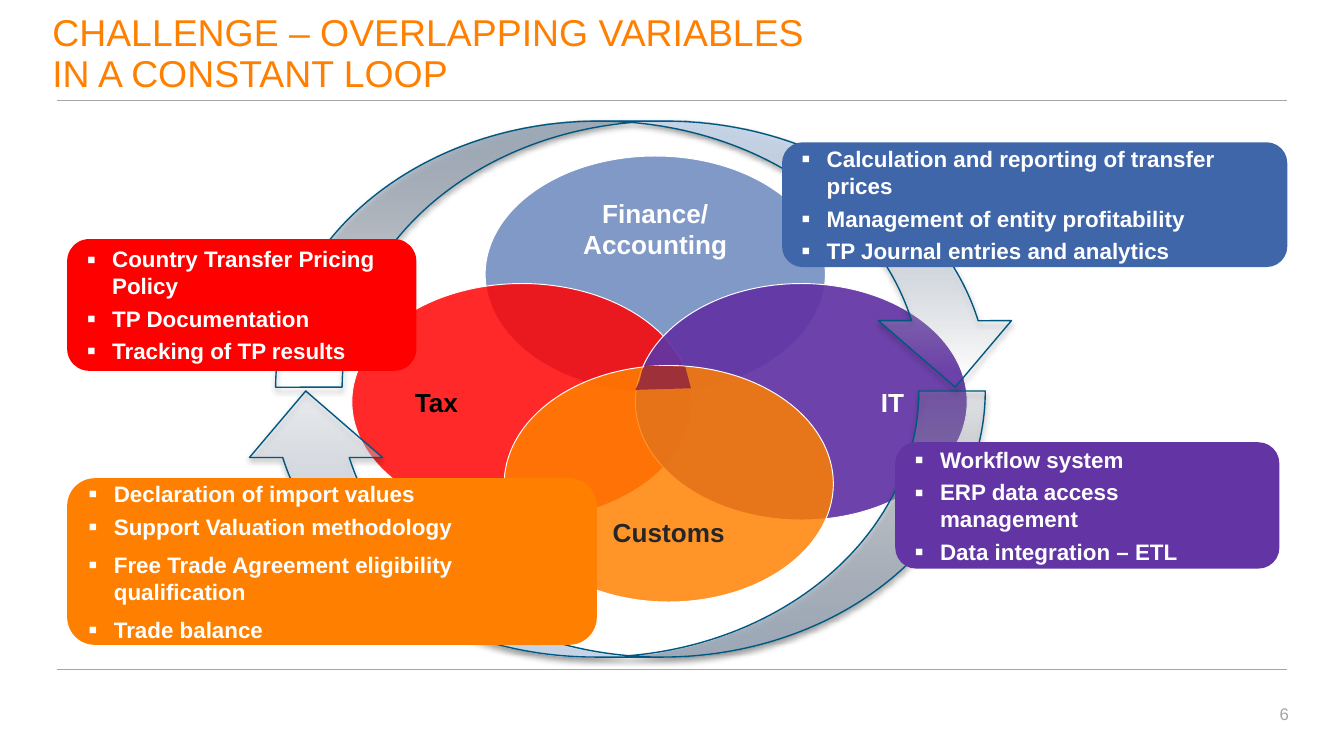
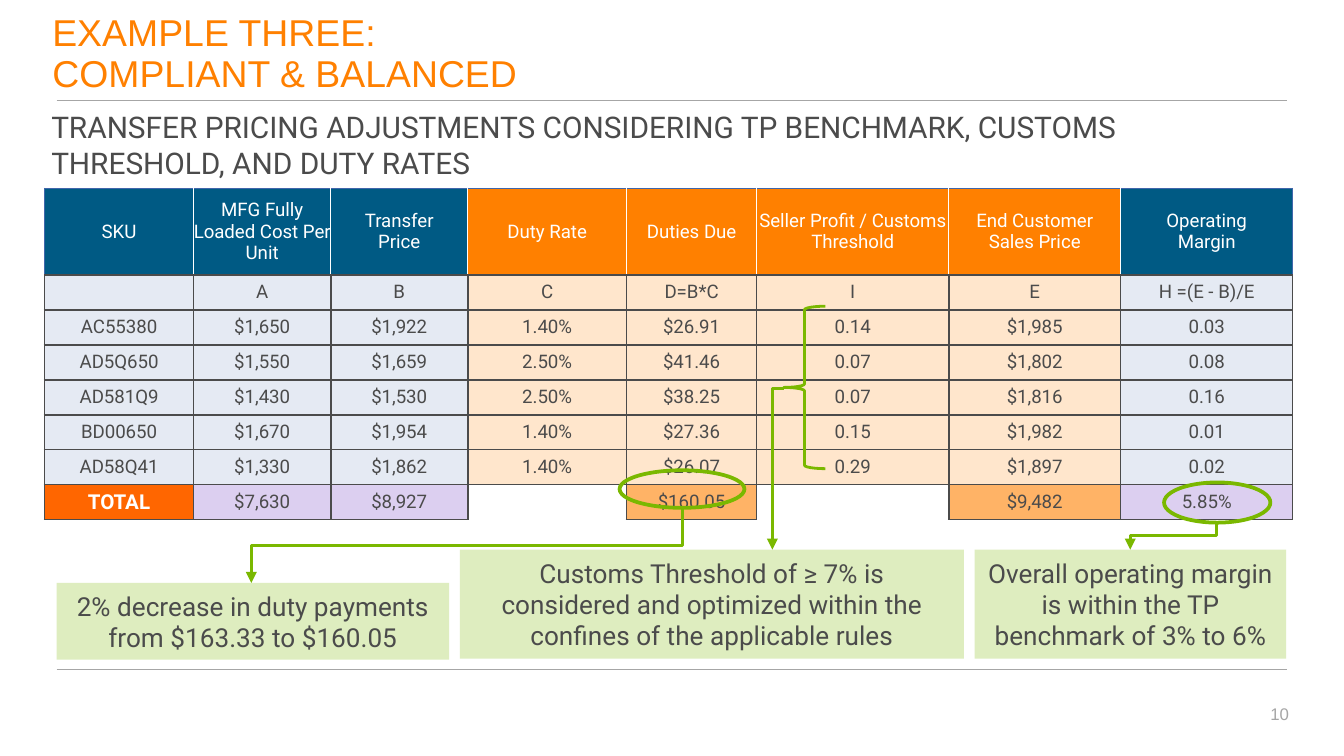
from lxml import etree
from pptx import Presentation
from pptx.dml.color import RGBColor
from pptx.enum.shapes import MSO_CONNECTOR, MSO_SHAPE
from pptx.enum.text import MSO_ANCHOR, PP_ALIGN
from pptx.oxml import parse_xml
from pptx.oxml.ns import qn
from pptx.util import Cm, Pt

STRAIGHT, ELBOW = MSO_CONNECTOR.STRAIGHT, MSO_CONNECTOR.ELBOW
OVAL, CIRCLE = MSO_SHAPE.OVAL, MSO_SHAPE.FLOWCHART_CONNECTOR
RECTANGLE, ROUNDED = MSO_SHAPE.RECTANGLE, MSO_SHAPE.ROUNDED_RECTANGLE
BRACE, LOOP_ARROW = MSO_SHAPE.LEFT_BRACE, MSO_SHAPE.CURVED_DOWN_ARROW
TOP, MIDDLE, BOTTOM = MSO_ANCHOR.TOP, MSO_ANCHOR.MIDDLE, MSO_ANCHOR.BOTTOM
LEFT, CENTER, RIGHT = PP_ALIGN.LEFT, PP_ALIGN.CENTER, PP_ALIGN.RIGHT

WHITE = RGBColor(0xFF, 0xFF, 0xFF)
BLACK = RGBColor(0x00, 0x00, 0x00)
CHARCOAL = RGBColor(0x26, 0x26, 0x26)
TEXT_GRAY = RGBColor(0x4B, 0x4B, 0x4B)
RULE_GRAY = RGBColor(0xA6, 0xA6, 0xA6)
ORANGE = RGBColor(0xFF, 0x80, 0x00)
TOTAL_ORANGE = RGBColor(0xFF, 0x66, 0x00)
MID_ORANGE = RGBColor(0xFF, 0xB3, 0x66)
PALE_ORANGE = RGBColor(0xFF, 0xE6, 0xCC)
RED = RGBColor(0xFF, 0x00, 0x00)
MAROON = RGBColor(0x9E, 0x30, 0x39)
PURPLE = RGBColor(0x62, 0x34, 0xA4)
LILAC = RGBColor(0xDC, 0xCF, 0xF0)
BLUE = RGBColor(0x40, 0x66, 0xAA)
LIGHT_BLUE = RGBColor(0x80, 0x99, 0xC6)
PALE_BLUE = RGBColor(0xE5, 0xEA, 0xF3)
NAVY = RGBColor(0x00, 0x5A, 0x84)
ARROW_EDGE = RGBColor(0x00, 0x58, 0x81)
GREEN = RGBColor(0x7A, 0xB8, 0x00)
PALE_GREEN = RGBColor(0xDE, 0xED, 0xBF)

DRAWING = "http://schemas.openxmlformats.org/drawingml/2006/main"
INSETS = (0.25, 0.13, 0.25, 0.13)
NO_INSETS = (0, 0, 0, 0)


def add_child(parent, tag, **attributes):
    return etree.SubElement(parent, qn(tag), attributes)


class DeckBuilder:
    """Holds the deck style and the page being filled; lengths are in cm."""

    def __init__(self):
        self.deck = Presentation()
        self.deck.slide_width, self.deck.slide_height = Cm(25.4), Cm(14.29)
        self.page = None

    def new_page(self, title, number):
        self.page = self.deck.slides.add_slide(self.deck.slide_layouts[6])
        for y in (12.65, 1.9):
            self.line((1.07, y), (24.33, y), RULE_GRAY, 0.5)
        self.text_box((23.52, 13.18, 1.09, 0.64), [number], 9, RULE_GRAY, align=RIGHT)
        self.text_box((0.99, 0.2, 23.34, 1.6), [title], 20, ORANGE,
                      anchor=BOTTOM, insets=NO_INSETS, spacing=0.9)

    def fill_text(self, frame, texts, size, color, font="Arial", bold=False, align=LEFT,
                  anchor=TOP, insets=INSETS, spacing=None):
        """Add one paragraph per text; a newline inside a text breaks the line."""
        frame.word_wrap = True
        frame.vertical_anchor = anchor
        (frame.margin_left, frame.margin_top,
         frame.margin_right, frame.margin_bottom) = map(Cm, insets)
        for index, text in enumerate(texts):
            para = frame.add_paragraph() if index else frame.paragraphs[0]
            para.alignment = align
            para.line_spacing = spacing
            for row, words in enumerate(text.split("\n")):
                if row:
                    para.add_line_break()
                self.span(para, words, size, color, font, bold)

    def span(self, para, words, size, color, font, bold):
        span = para.add_run()
        span.text = words
        span.font.size, span.font.name, span.font.bold = Pt(size), font, bold
        span.font.color.rgb = color

    def text_box(self, at, texts, size, color, **style):
        box = self.page.shapes.add_textbox(*map(Cm, at))
        self.fill_text(box.text_frame, texts, size, color, **style)

    def paint(self, shape, fill=None, alpha=100, line=None, width=0.5):
        shape.shadow.inherit = False
        if fill is None:
            shape.fill.background()
        else:
            shape.fill.solid()
            shape.fill.fore_color.rgb = fill
            if alpha < 100:
                color = shape._element.spPr.find(".//" + qn("a:srgbClr"))
                add_child(color, "a:alpha", val=str(alpha * 1000))
        if line is None:
            shape.line.fill.background()
        else:
            shape.line.color.rgb = line
            shape.line.width = Pt(width)

    def shape(self, kind, at, **paint):
        shape = self.page.shapes.add_shape(kind, *map(Cm, at))
        self.paint(shape, **paint)
        return shape

    def polygon(self, points, fill):
        corners = [(Cm(x), Cm(y)) for x, y in points]
        builder = self.page.shapes.build_freeform(*corners[0], scale=1.0)
        builder.add_line_segments(corners[1:], close=True)
        self.paint(builder.convert_to_shape(), fill)

    def bullet_box(self, at, fill, items, gaps, right_inset=0.25):
        box = self.shape(ROUNDED, at, fill=fill)
        self.fill_text(box.text_frame, items, 12, WHITE, bold=True, anchor=MIDDLE,
                       insets=(0.25, 0.13, right_inset, 0.13))
        for para, gap in zip(box.text_frame.paragraphs, gaps):
            para.level = 1
            para.space_before = Pt(gap)
            properties = para._p.get_or_add_pPr()
            properties.set("marL", str(Cm(0.48)))
            properties.set("indent", str(Cm(-0.48)))
            add_child(add_child(properties, "a:buClr"), "a:srgbClr", val=str(WHITE))
            add_child(properties, "a:buSzPct", val="116000")
            add_child(properties, "a:buFont", typeface="Arial")
            add_child(properties, "a:buChar", char="▪")

    def loop_arrow(self, at, rotation, start_alpha):
        arrow = self.shape(LOOP_ARROW, at, line=ARROW_EDGE, width=0.75)
        arrow.rotation = rotation
        properties = arrow._element.spPr
        gradient = parse_xml(
            f'<a:gradFill xmlns:a="{DRAWING}" rotWithShape="1"><a:gsLst>'
            f'<a:gs pos="6000"><a:srgbClr val="D9E3F0"><a:alpha val="{start_alpha * 1000}"/>'
            '</a:srgbClr></a:gs><a:gs pos="100000"><a:srgbClr val="C5D4E7"/></a:gs>'
            '<a:gs pos="100000"><a:srgbClr val="E9EEF7"/></a:gs></a:gsLst>'
            '<a:lin ang="16200000" scaled="0"/></a:gradFill>')
        properties.replace(properties.find(qn("a:noFill")), gradient)
        shadow = add_child(properties.find(qn("a:effectLst")), "a:outerShdw",
                           blurRad=str(Pt(3.1)), dist=str(Pt(1.6)), dir="5400000",
                           rotWithShape="0")
        add_child(add_child(shadow, "a:srgbClr", val=str(BLACK)), "a:alpha", val="38000")

    def line(self, start, end, color, width, kind=STRAIGHT):
        line = self.page.shapes.add_connector(kind, *map(Cm, start + end))
        line.line.color.rgb = color
        line.line.width = Pt(width)
        add_child(line._element.spPr, "a:effectLst")
        return line

    def elbow_arrow(self, start, end):
        arrow = self.line(start, end, GREEN, 1.5, ELBOW)
        add_child(arrow.line._get_or_add_ln(), "a:tailEnd", type="triangle")
        return arrow

    def corner_arrow(self, start, end):
        """Run sideways first, then down."""
        arrow = self.elbow_arrow(start, end)
        arrow._element.spPr.find(qn("a:prstGeom")).set("prst", "bentConnector2")

    def step_arrow(self, start, end):
        """Run down, left, then down: an elbow lying sideways, turned by 90 degrees."""
        middle_x, middle_y = (start[0] + end[0]) / 2, (start[1] + end[1]) / 2
        half_drop, half_run = (end[1] - start[1]) / 2, (start[0] - end[0]) / 2
        arrow = self.elbow_arrow((middle_x - half_drop, middle_y - half_run),
                                 (middle_x + half_drop, middle_y + half_run))
        arrow._element.spPr.find(qn("a:xfrm")).set("rot", "5400000")

    def table(self, left, top, widths, heights):
        frame = self.page.shapes.add_table(len(heights), len(widths), Cm(left), Cm(top),
                                           Cm(sum(widths)), Cm(sum(heights)))
        table = frame.table
        table.first_row = table.horz_banding = False
        for column, width in zip(table.columns, widths):
            column.width = Cm(width)
        for row, height in zip(table.rows, heights):
            row.height = Cm(height)
        return table

    def cell(self, cell, text, fill, borders, insets, **style):
        if text:
            self.fill_text(cell.text_frame, [text], font="Roboto", align=CENTER, **style)
        else:
            add_child(cell.text_frame.paragraphs[0]._p, "a:endParaRPr", sz="1000")
        cell.vertical_anchor = MIDDLE
        cell.margin_left, cell.margin_top, cell.margin_right, cell.margin_bottom = map(Cm, insets)
        properties = cell._tc.get_or_add_tcPr()
        for side, (color, width) in zip("LRTB", borders):
            edge = add_child(properties, f"a:ln{side}", w=str(Pt(width)))
            if color is None:
                add_child(edge, "a:noFill")
            else:
                add_child(add_child(edge, "a:solidFill"), "a:srgbClr", val=str(color))
        if fill is None:
            cell.fill.background()
        else:
            cell.fill.solid()
            cell.fill.fore_color.rgb = fill


def build_loop_page(builder):
    builder.new_page("CHALLENGE – OVERLAPPING VARIABLES\nIN A CONSTANT LOOP", "6")
    circles = [
        ((9.17, 2.95, 6.43, 4.47), LIGHT_BLUE, 100, "Finance/ Accounting", WHITE, CENTER, TOP, INSETS),
        ((6.65, 5.36, 6.43, 4.47), RED, 84, "Tax", BLACK, LEFT, MIDDLE, INSETS),
        ((12.01, 5.36, 6.27, 4.47), PURPLE, 93, "IT", WHITE, CENTER, MIDDLE, (3.65, 0.13, 0.2, 0.13)),
        ((9.53, 6.91, 6.22, 4.47), ORANGE, 84, "Customs", CHARCOAL, CENTER, MIDDLE,
         (0.25, 1.96, 0.25, 0.13)),
    ]
    for at, fill, alpha, name, color, align, anchor, insets in circles:
        circle = builder.shape(CIRCLE, at, fill=fill, alpha=alpha, line=WHITE)
        builder.fill_text(circle.text_frame, [name], 14, color, bold=True,
                          align=align, anchor=anchor, insets=insets)
    builder.polygon([(12.14, 6.99), (12.19, 6.91), (12.95, 6.93), (13.06, 7.34),
                     (12.01, 7.37), (12.09, 7.2)], MAROON)
    builder.loop_arrow((4.52, 7.39, 14.1, 5.03), 180, 22)
    builder.loop_arrow((5.21, 2.29, 14.1, 5.03), 0, 0)
    builder.bullet_box((1.27, 9.04, 10.01, 3.15), ORANGE, [
        "Declaration of import values", "Support Valuation methodology",
        "Free Trade Agreement eligibility qualification", "Trade balance"], (0, 3, 6, 6))
    builder.bullet_box((14.78, 2.69, 9.55, 2.36), BLUE, [
        "Calculation and reporting of transfer prices",
        "Management of entity profitability", "TP Journal entries and analytics"], (0, 3, 3))
    builder.bullet_box((1.27, 4.52, 6.6, 2.49), RED, [
        "Country Transfer Pricing Policy", "TP Documentation", "Tracking of TP results"], (0, 3, 3))
    builder.bullet_box((16.92, 8.36, 7.26, 2.39), PURPLE, [
        "Workflow system", "ERP data access management", "Data integration – ETL"],
        (0, 3, 3), right_inset=1.2)


def build_price_table(builder):
    rows = [
        ["SKU", "MFG Fully Loaded Cost Per Unit", "Transfer Price", "Duty Rate", "Duties Due",
         "Seller Profit / Customs Threshold", "End Customer Sales Price", "Operating\nMargin"],
        ["", "A", "B", "C", "D=B*C", "I", "E", "H =(E - B)/E"],
        ["AC55380", "$1,650", "$1,922", "1.40%", "$26.91", "0.14", "$1,985", "0.03"],
        ["AD5Q650", "$1,550", "$1,659", "2.50%", "$41.46", "0.07", "$1,802", "0.08"],
        ["AD581Q9", "$1,430", "$1,530", "2.50%", "$38.25", "0.07", "$1,816", "0.16"],
        ["BD00650", "$1,670", "$1,954", "1.40%", "$27.36", "0.15", "$1,982", "0.01"],
        ["AD58Q41", "$1,330", "$1,862", "1.40%", "$26.07", "0.29", "$1,897", "0.02"],
        ["TOTAL", "$7,630", "$8,927", "", "$160.05", "", "$9,482", "5.85%"],
    ]
    widths = [2.82, 2.59, 2.59, 3, 2.46, 3.63, 3.25, 3.25]
    total, last = len(rows) - 1, len(widths) - 1
    table = builder.table(0.84, 3.56, widths, [1.64] + [0.66] * total)
    dark, white, blue = (TEXT_GRAY, 1), (WHITE, 0.5), (BLUE, 0.5)
    total_fills = [TOTAL_ORANGE, LILAC, LILAC, None, MID_ORANGE, None, MID_ORANGE, LILAC]
    for row, texts in enumerate(rows):
        for column, text in enumerate(texts):
            customs = 3 <= column <= 6
            style = {"size": 10, "color": TEXT_GRAY}
            insets = NO_INSETS
            borders = [dark] * 4
            fill = PALE_ORANGE if customs else PALE_BLUE
            if row == 0:
                fill = ORANGE if customs else NAVY
                borders = [white if column else blue, white if column < last else blue, blue, dark]
                style["color"] = WHITE
                if column not in (1, 5):
                    insets = (0.25, 0.1, 0.25, 0.1)
            elif row == total:
                fill = total_fills[column]
                if column == 0:
                    style.update(size=11, color=WHITE, bold=True)
                if fill is None:
                    borders = [dark, dark, dark, (None, 0)]
            builder.cell(table.cell(row, column), text, fill, borders, insets, **style)


def build_example_page(builder):
    builder.new_page("EXAMPLE THREE:\nCOMPLIANT & BALANCED", "10")
    build_price_table(builder)
    callouts = [
        ((1.07, 11.02, 7.42, 1.45), "2% decrease in duty payments from $163.33 to $160.05"),
        ((8.69, 10.39, 9.53, 2.06), "Customs Threshold of ≥ 7% is considered and optimized "
                                    "within the confines of the applicable rules"),
        ((18.42, 10.39, 5.89, 2.06), "Overall operating margin is within the TP "
                                     "benchmark of 3% to 6%"),
    ]
    for at, text in callouts:
        callout = builder.shape(RECTANGLE, at, fill=PALE_GREEN)
        builder.fill_text(callout.text_frame, [text], 14, TEXT_GRAY, font="Roboto",
                          align=CENTER, anchor=MIDDLE)
    builder.step_arrow((12.9, 9.6), (4.75, 11.02))
    builder.shape(OVAL, (11.71, 8.89, 2.36, 0.71), line=GREEN, width=2)
    builder.shape(BRACE, (14.81, 5.79, 0.79, 3.07), line=GREEN, width=1.5)
    builder.corner_arrow((14.81, 7.34), (14.6, 10.39))
    builder.shape(OVAL, (22, 9.12, 2.01, 0.76), line=GREEN, width=2)
    builder.step_arrow((22.99, 9.86), (21.36, 10.39))
    builder.text_box((0.97, 2.06, 21.41, 1.37), [
        "TRANSFER PRICING ADJUSTMENTS CONSIDERING TP BENCHMARK, CUSTOMS THRESHOLD, "
        "AND DUTY RATES"], 16, TEXT_GRAY, font="Roboto", insets=(0, 0, 0.51, 0))


def main():
    builder = DeckBuilder()
    build_loop_page(builder)
    build_example_page(builder)
    builder.deck.save("out.pptx")


if __name__ == "__main__":
    main()
